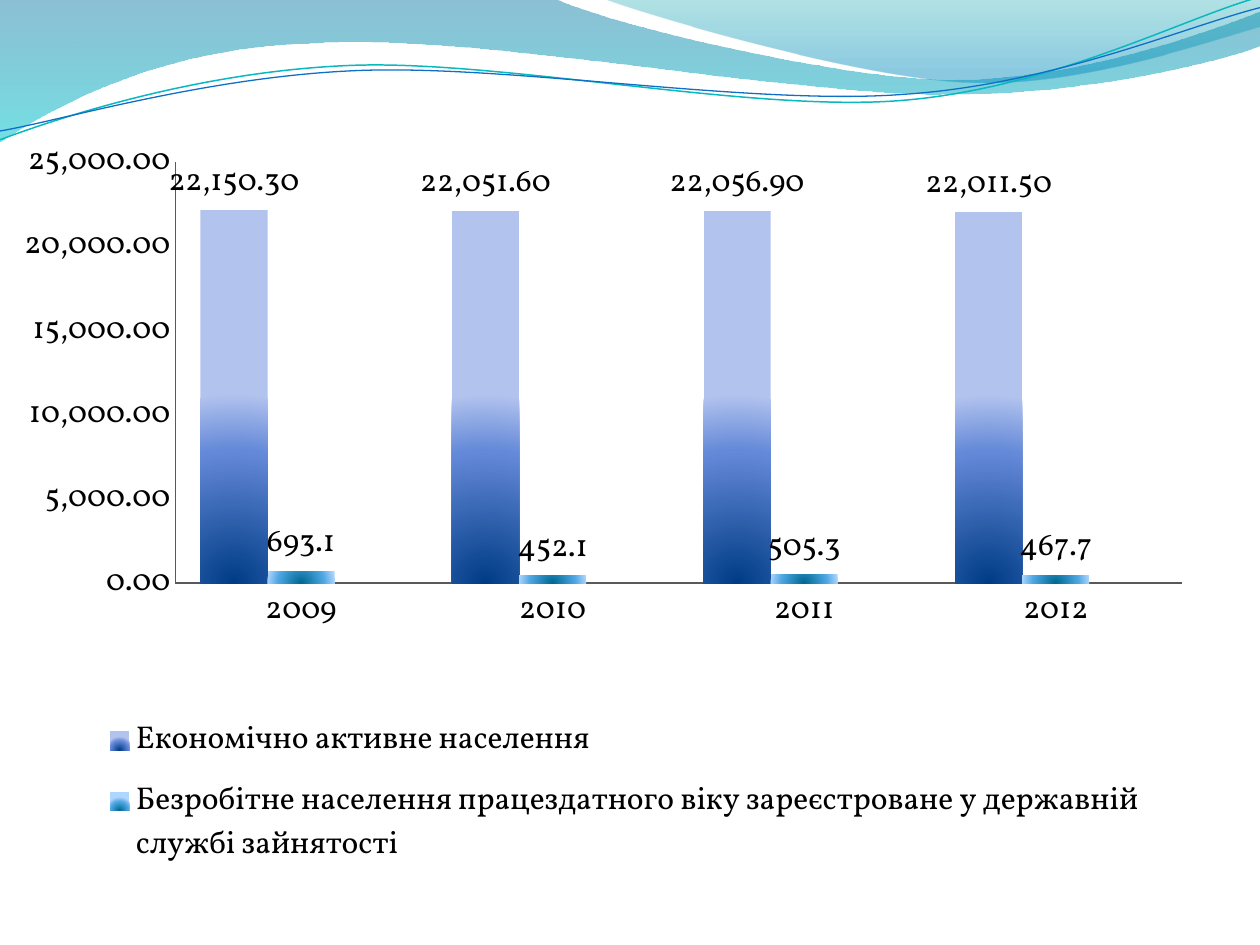
from lxml.etree import SubElement
from pptx import Presentation
from pptx.chart.data import CategoryChartData
from pptx.dml.color import RGBColor
from pptx.enum.chart import XL_CHART_TYPE as ChartType
from pptx.enum.chart import XL_LABEL_POSITION as LabelPos
from pptx.enum.chart import XL_LEGEND_POSITION as LegendPos
from pptx.enum.chart import XL_TICK_MARK as Tick
from pptx.oxml import parse_xml
from pptx.oxml.ns import nsdecls, qn
from pptx.util import Pt

FONT = "Vollkorn"
MONEY = "#,##0.00"
DOWNWARD = '<a:lin ang="5400000" scaled="0"/>'
FROM_BASE = '<a:path path="circle"><a:fillToRect l="50000" t="100000" r="50000"/></a:path>'

# Outlines in points: a start, then steps of one point (line) or three (curve)
BROAD_WAVE = [(0, 0), [(317, -0.7)],
              [(342.7, 12.2), (478, 45.4), (545.8, 45.4)],
              [(614.2, 45.4), (689.8, 18.7), (720, 6.5)], [(720.7, 25.9)],
              [(707.8, 31.7), (626.4, 54.7), (537.1, 54)],
              [(447.8, 54), (275, 20.2), (185, 24.5)],
              [(92.9, 25.9), (33.1, 59.8), (-0.7, 81.4)]]
RIGHT_WAVE = [(345, -0.7), [(366.5, 7.9), (491, 44.6), (553.7, 46.8)],
              [(616.3, 49.7), (691.9, 23), (720, 15.1)], [(720, 0)]]
TEAL_LINE = [(-1.4, 62.9), [(33.7, 51.6), (114, 29.4), (199.8, 29.9)],
             [(284.8, 30.3), (425.8, 67.2), (512.4, 64.8)],
             [(599, 62.4), (676.4, 25.7), (720.2, 15.6)]]
BLUE_LINE = [(-1.2, 57.9), [(33, 53.8), (118.3, 32.5), (204, 33)],
             [(290.5, 33.4), (428.9, 63.8), (515.5, 61.3)],
             [(601.3, 59.7), (678.5, 30.1), (721.4, 21.4)]]

YEARS = ["2009", "2010", "2011", "2012"]
# Name, values, label format, gradient stops (position, colour, opacity)
POPULATION = [
    ("Економічно активне населення", [22150.3, 22051.6, 22056.9, 22011.5], MONEY,
     [(0, "003C86", 100), (70, "6489D8", 100), (100, "B2C3EE", 100)]),
    ("Безробітне населення працездатного віку зареєстроване у державній службі зайнятості\n",
     [693.1, 452.1, 505.3, 467.7], "0.0",
     [(0, "006892", 100), (65, "4AA5E0", 100), (100, "AED6FF", 100)]),
    ("Series 3", [None] * 4, MONEY, [(0, "0BD0D9", 100), (100, "0BD0D9", 100)]),
]


def rgb(code):
    return RGBColor.from_string(code)


def fill_gradient(fill, properties, stops, direction):
    """Fill with stops of position, colour and opacity in per cent."""
    fill.background()
    stop_xml = "".join(
        f'<a:gs pos="{pos * 1000}"><a:srgbClr val="{code}">'
        f'<a:alpha val="{opacity * 1000}"/></a:srgbClr></a:gs>'
        for pos, code, opacity in stops)
    gradient = parse_xml(f'<a:gradFill {nsdecls("a")} rotWithShape="1">'
                         f'<a:gsLst>{stop_xml}</a:gsLst>{direction}</a:gradFill>')
    properties.replace(properties.find(qn("a:noFill")), gradient)


def add_outline(slide, outline, close):
    """Draw all points as lines, then join each curve's three into one curve."""
    start, *steps = outline
    builder = slide.shapes.build_freeform(Pt(start[0]), Pt(start[1]))
    builder.add_line_segments([(Pt(x), Pt(y)) for step in steps for x, y in step],
                              close=close)
    shape = builder.convert_to_shape()
    shape.shadow.inherit = False
    segments = iter(list(shape._element.iter(qn("a:lnTo"))))
    for step in steps:
        parts = [next(segments) for _ in step]
        if len(step) == 3:
            curve = parse_xml(f'<a:cubicBezTo {nsdecls("a")}/>')
            parts[0].addprevious(curve)
            for part in parts:
                curve.append(part[0])
                part.getparent().remove(part)
    return shape


def add_wave(slide, outline, stops):
    wave = add_outline(slide, outline, close=True)
    wave.line.fill.background()
    fill_gradient(wave.fill, wave._element.spPr, stops, DOWNWARD)


def add_wave_line(slide, outline, code, width):
    wave = add_outline(slide, outline, close=False)
    wave.rotation = 357.3
    wave.fill.background()
    wave.line.color.rgb = rgb(code)
    wave.line.width = Pt(width)


def make_layout(x, y, w, h, inner=False):
    """Place the plot or the legend by fractions of the chart."""
    layout = parse_xml(f'<c:layout {nsdecls("c")}><c:manualLayout/></c:layout>')
    settings = [("layoutTarget", "inner")] if inner else []
    settings += [("xMode", "edge"), ("yMode", "edge"),
                 ("x", x), ("y", y), ("w", w), ("h", h)]
    for tag, value in settings:
        SubElement(layout[0], qn(f"c:{tag}")).set("val", str(value))
    return layout


def replace_layout(parent, before, layout):
    """Put the layout after the given child, or first when there is none."""
    for old in parent.findall(qn("c:layout")):
        parent.remove(old)
    if before is None:
        parent.insert(0, layout)
    else:
        before.addnext(layout)


def style_axis(axis):
    axis.major_tick_mark = axis.minor_tick_mark = Tick.NONE
    axis.has_major_gridlines = False
    axis.format.line.color.rgb = rgb("595959")
    axis.format.line.width = Pt(0.75)


def style_legend(chart):
    chart.has_legend = True
    legend = chart.legend
    legend.position = LegendPos.BOTTOM
    legend.include_in_layout = False
    position = legend._element.find(qn("c:legendPos"))
    replace_layout(legend._element, position, make_layout(0.08, 0.7, 0.88, 0.28))
    # The empty third series has no legend entry
    position.addnext(parse_xml(f'<c:legendEntry {nsdecls("c")}><c:idx val="2"/>'
                               '<c:delete val="1"/></c:legendEntry>'))


def add_population_chart(slide):
    data = CategoryChartData(number_format=MONEY)
    data.categories = YEARS
    for name, values, label_format, _ in POPULATION:
        data.add_series(name, values, number_format=label_format)
    chart = slide.shapes.add_chart(ChartType.COLUMN_CLUSTERED, Pt(0), Pt(78.5),
                                   Pt(686.2), Pt(461.5), data).chart
    chart.has_title = False
    chart.font.name = FONT
    chart.font.size = Pt(18)
    chart.font.color.rgb = rgb("000000")

    # Axes
    style_axis(chart.category_axis)
    style_axis(chart.value_axis)
    chart.value_axis.minimum_scale = 0
    chart.value_axis.maximum_scale = 25000
    chart.value_axis.major_unit = 5000
    chart.value_axis.tick_labels.number_format = MONEY
    chart.value_axis.tick_labels.number_format_is_linked = False

    # Columns and their values
    plot = chart.plots[0]
    plot.gap_width = 75
    plot.overlap = 0
    plot.vary_by_categories = False
    for series, (_, _, label_format, stops) in zip(plot.series, POPULATION):
        fill_gradient(series.format.fill, series._element.spPr, stops, FROM_BASE)
        labels = series.data_labels
        labels.show_value = True
        labels.position = LabelPos.OUTSIDE_END
        labels.number_format = label_format
        labels.number_format_is_linked = False

    replace_layout(plot._element.getparent(), None,
                   make_layout(0.146, 0.03, 0.838, 0.522, inner=True))
    style_legend(chart)


def main():
    deck = Presentation()
    deck.slide_width, deck.slide_height = Pt(720), Pt(540)
    slide = deck.slides.add_slide(deck.slide_layouts[6])

    # Waves along the top edge
    add_wave(slide, BROAD_WAVE, [(0, "0074A1", 45), (100, "00C6CF", 55)])
    add_wave(slide, RIGHT_WAVE, [(0, "00A1A9", 30), (80, "008BBF", 45)])
    add_wave_line(slide, TEAL_LINE, "0AB8BF", 0.85)
    add_wave_line(slide, BLUE_LINE, "0F6FC6", 0.75)

    add_population_chart(slide)
    deck.save("out.pptx")


if __name__ == "__main__":
    main()
